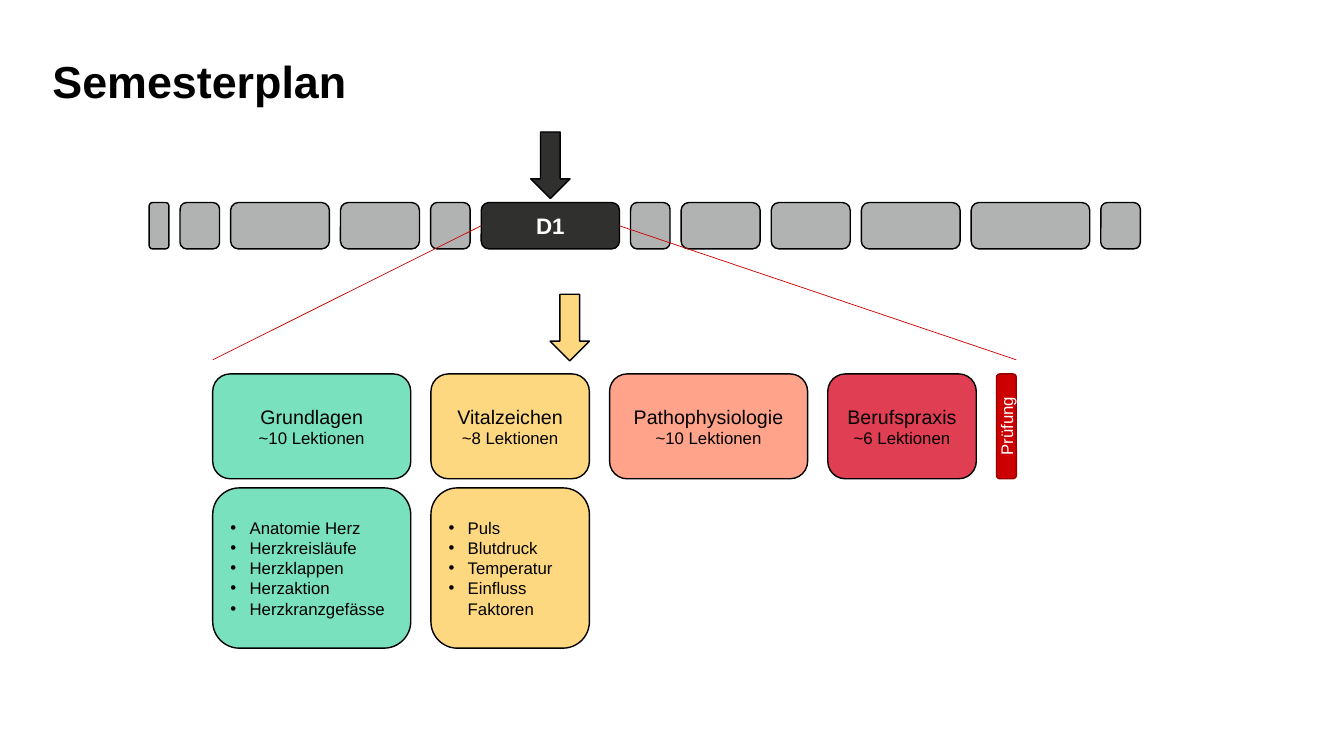
from dataclasses import dataclass
from typing import NamedTuple

from lxml.etree import SubElement
from pptx import Presentation
from pptx.dml.color import RGBColor
from pptx.enum.shapes import MSO_CONNECTOR, MSO_SHAPE
from pptx.enum.text import MSO_ANCHOR, PP_ALIGN
from pptx.oxml.ns import qn
from pptx.util import Inches, Pt


@dataclass(frozen=True)
class Theme:
    font: str = "Arial"
    black: str = "000000"
    white: str = "FFFFFF"
    dark: str = "30302F"
    grey: str = "B1B3B3"
    green: str = "7AE1BF"
    yellow: str = "FED880"
    salmon: str = "FFA38B"
    crimson: str = "E03E52"
    red: str = "CC0000"
    dark_red: str = "970000"
    title_size: float = 32
    focus_size: float = 16
    module_size: float = 14
    detail_size: float = 12
    outline: float = 1
    ray: float = 0.5


class Box(NamedTuple):
    left: float
    top: float
    width: float
    height: float

    @property
    def right(self):
        return self.left + self.width

    @property
    def bottom(self):
        return self.top + self.height

    def emu(self):
        return [Inches(length) for length in self]


THEME = Theme()
SLIDE_WIDTH, SLIDE_HEIGHT = 13.33, 7.5
ARROW_WIDTH, ARROW_HEIGHT = 0.39, 0.66
BULLET_INDENT = 0.19

# Relative widths of the semester blocks; FOCUS is the position of D1
BLOCK_UNITS = [1, 2, 5, 4, 2, 7, 2, 4, 4, 5, 6, 2]
FOCUS = 5

# Relative width, name, lessons, colour, topics
MODULES = [
    (10, "Grundlagen", "~10 Lektionen", THEME.green,
     ["Anatomie Herz", "Herzkreisläufe", "Herzklappen", "Herzaktion", "Herzkranzgefässe"]),
    (8, "Vitalzeichen", "~8 Lektionen", THEME.yellow,
     ["Puls", "Blutdruck", "Temperatur", "Einfluss Faktoren"]),
    (10, "Pathophysiologie", "~10 Lektionen", THEME.salmon, []),
    (7.5, "Berufspraxis", "~6 Lektionen", THEME.crimson, []),
]
EXAM_UNITS = 1
CURRENT_MODULE = 1


def spread(box, units, gap):
    """Divide a box into columns of the given relative widths."""
    unit = (box.width - gap * (len(units) - 1)) / sum(units)
    columns, left = [], box.left
    for count in units:
        columns.append(Box(left, box.top, count * unit, box.height))
        left += count * unit + gap
    return columns


def write(frame, text, size=THEME.detail_size, color=THEME.black, bold=False,
          align=PP_ALIGN.CENTER, bullet=False, first=True):
    paragraph = frame.paragraphs[0] if first else frame.add_paragraph()
    paragraph.alignment = align
    if bullet:
        properties = paragraph._p.get_or_add_pPr()
        properties.set("marL", str(Inches(BULLET_INDENT)))
        properties.set("indent", str(-Inches(BULLET_INDENT)))
        SubElement(properties, qn("a:buFont")).set("typeface", THEME.font)
        SubElement(properties, qn("a:buChar")).set("char", "•")
    run = paragraph.add_run()
    run.text = text
    run.font.name, run.font.size, run.font.bold = THEME.font, Pt(size), bold
    run.font.color.rgb = RGBColor.from_string(color)


def draw(slide, kind, box, fill, line=THEME.black):
    shape = slide.shapes.add_shape(kind, *box.emu())
    shape.shadow.inherit = False
    shape.fill.solid()
    shape.fill.fore_color.rgb = RGBColor.from_string(fill)
    shape.line.color.rgb = RGBColor.from_string(line)
    shape.line.width = Pt(THEME.outline)
    shape.text_frame.word_wrap = True
    shape.text_frame.vertical_anchor = MSO_ANCHOR.MIDDLE
    return shape


def draw_title(slide, box):
    frame = slide.shapes.add_textbox(*box.emu()).text_frame
    frame.word_wrap = True
    frame.margin_left = frame.margin_right = frame.margin_top = frame.margin_bottom = 0
    write(frame, "Semesterplan", size=THEME.title_size, bold=True, align=PP_ALIGN.LEFT)


def draw_semester(slide, box):
    """Row of blocks with D1 marked by an arrow; returns the D1 block."""
    columns = spread(box, BLOCK_UNITS, gap=0.11)
    blocks = [draw(slide, MSO_SHAPE.ROUNDED_RECTANGLE, column,
                   THEME.dark if index == FOCUS else THEME.grey)
              for index, column in enumerate(columns)]
    write(blocks[FOCUS].text_frame, "D1", size=THEME.focus_size, color=THEME.white, bold=True)

    focus = columns[FOCUS]
    marker = Box(focus.left + (focus.width - ARROW_WIDTH) / 2,
                 box.top - 0.04 - ARROW_HEIGHT, ARROW_WIDTH, ARROW_HEIGHT)
    draw(slide, MSO_SHAPE.DOWN_ARROW, marker, THEME.dark)
    return blocks[FOCUS]


def draw_modules(slide, box):
    """Module cards, topic cards below them, and the exam at the end."""
    units = [module[0] for module in MODULES] + [EXAM_UNITS]
    header = box._replace(height=1.04)
    columns = spread(header, units, gap=0.2)
    topics_top = header.bottom + 0.09

    for column, (_, name, lessons, color, topics) in zip(columns, MODULES):
        card = draw(slide, MSO_SHAPE.ROUNDED_RECTANGLE, column, color)
        write(card.text_frame, name, size=THEME.module_size)
        write(card.text_frame, lessons, first=False)
        if topics:
            area = column._replace(top=topics_top, height=box.bottom - topics_top)
            details = draw(slide, MSO_SHAPE.ROUNDED_RECTANGLE, area, color)
            for index, topic in enumerate(topics):
                write(details.text_frame, topic, align=PP_ALIGN.LEFT,
                      bullet=True, first=index == 0)

    # Exam, read from bottom to top
    exam = draw(slide, MSO_SHAPE.ROUNDED_RECTANGLE, columns[-1], THEME.red, THEME.dark_red)
    exam.text_frame._txBody.bodyPr.set("vert", "vert270")
    write(exam.text_frame, "Prüfung", color=THEME.white)

    # Arrow at the right edge of the current module
    marker = Box(columns[CURRENT_MODULE].right - ARROW_WIDTH,
                 box.top - 0.13 - ARROW_HEIGHT, ARROW_WIDTH, ARROW_HEIGHT)
    draw(slide, MSO_SHAPE.DOWN_ARROW, marker, MODULES[CURRENT_MODULE][3])


def draw_zoom(slide, focus_block, box):
    """Thin rays from the sides of D1 to the corners above the modules."""
    for side, corner in ((1, box.left), (3, box.right)):
        ray = slide.shapes.add_connector(
            MSO_CONNECTOR.STRAIGHT, 0, 0, Inches(corner), Inches(box.top - 0.14))
        ray.begin_connect(focus_block, side)
        ray.line.color.rgb = RGBColor.from_string(THEME.red)
        ray.line.width = Pt(THEME.ray)
        SubElement(ray._element.spPr, qn("a:effectLst"))


def main():
    deck = Presentation()
    deck.slide_width, deck.slide_height = Inches(SLIDE_WIDTH), Inches(SLIDE_HEIGHT)
    slide = deck.slides.add_slide(deck.slide_layouts[6])

    modules_box = Box(2.11, 3.71, 7.97, 2.72)
    draw_title(slide, Box(0.52, 0.53, 10.79, 1.05))
    draw_modules(slide, modules_box)
    focus_block = draw_semester(slide, Box(1.48, 2.01, 9.83, 0.46))
    draw_zoom(slide, focus_block, modules_box)
    deck.save("out.pptx")


if __name__ == "__main__":
    main()
